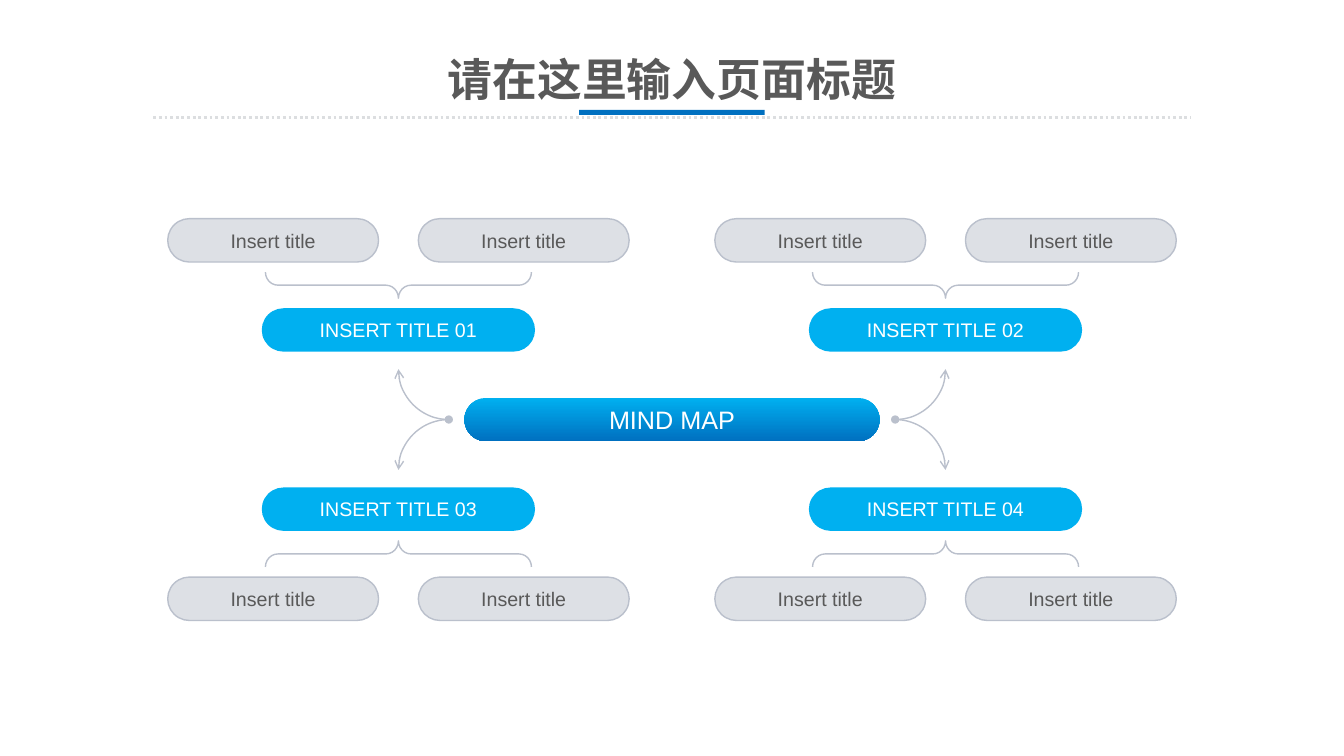
"""Build a mind map slide with one centre and four branches."""
from lxml import etree
from pptx import Presentation
from pptx.dml.color import RGBColor
from pptx.enum.dml import MSO_LINE
from pptx.enum.lang import MSO_LANGUAGE_ID
from pptx.enum.shapes import MSO_CONNECTOR, MSO_SHAPE
from pptx.enum.text import MSO_ANCHOR, MSO_AUTO_SIZE, PP_ALIGN
from pptx.oxml.ns import qn
from pptx.util import Pt

PILL, BRACE, ARC = MSO_SHAPE.ROUNDED_RECTANGLE, MSO_SHAPE.LEFT_BRACE, MSO_SHAPE.ARC
BAR = MSO_SHAPE.RECTANGLE
STRAIGHT = MSO_CONNECTOR.STRAIGHT
DOTTED = MSO_LINE.ROUND_DOT
CENTER, MIDDLE = PP_ALIGN.CENTER, MSO_ANCHOR.MIDDLE
NO_AUTOFIT = MSO_AUTO_SIZE.NONE
CHINESE = MSO_LANGUAGE_ID.SIMPLIFIED_CHINESE

COLORS = {
    "sky": "00B0F0",
    "blue": "0070C0",
    "leaf": "DDE0E5",
    "outline": "BAC0CC",
    "dots": "DCDEE0",
    "text": "595959",
    "white": "FFFFFF",
}
CENTER_X, CENTER_Y = 480, 299.7
COLUMN_OFFSET, ROW_STEP, LEAF_OFFSET = 195.4, 32, 89.5
PILL_HEIGHT, ARC_RADIUS = 31, 36
BRANCHES = [
    ("INSERT TITLE 01", -1, -1),
    ("INSERT TITLE 02", 1, -1),
    ("INSERT TITLE 03", -1, 1),
    ("INSERT TITLE 04", 1, 1),
]


def rgb(name):
    """Return the named colour."""
    return RGBColor.from_string(COLORS[name])


def write_text(frame, text, size=14, color="text", bold=False, language=None):
    """Put one centred line of text into a text frame."""
    frame.word_wrap = True
    frame.vertical_anchor = MIDDLE
    para = frame.paragraphs[0]
    para.alignment = CENTER
    span = para.add_run()
    span.text = text
    font = span.font
    font.name, font.size, font.bold = "Arial", Pt(size), bold
    font.color.rgb = rgb(color)
    if language:
        font.language_id = language


def add_centered(shapes, kind, x, y, width, height, fill=None, line=None):
    """Add a preset shape around a centre point."""
    shape = shapes.add_shape(
        kind, Pt(x - width / 2), Pt(y - height / 2), Pt(width), Pt(height))
    shape.shadow.inherit = False
    if fill:
        shape.fill.solid()
        shape.fill.fore_color.rgb = rgb(fill)
    else:
        shape.fill.background()
    if line:
        shape.line.color.rgb = rgb(line)
        shape.line.width = Pt(1)
    else:
        shape.line.fill.background()
    return shape


def add_pill(page, text, x, y, width, fill, line=None, **text_format):
    """Add a fully rounded box with a label."""
    pill = add_centered(page.shapes, PILL, x, y, width, PILL_HEIGHT, fill, line)
    pill.adjustments[0] = 0.5
    write_text(pill.text_frame, text, **text_format)
    return pill


def add_brace(page, x, y, rotation):
    """Add a brace that points at a branch title."""
    brace = add_centered(page.shapes, BRACE, x, y, 18.6, 190, line="outline")
    brace.adjustments[0] = 0.481
    brace.rotation = rotation


def add_arc(shapes, side, level, rotation, **ends):
    """Add a quarter circle with the given line ends."""
    x = CENTER_X + side * (COLUMN_OFFSET - ARC_RADIUS)
    y = CENTER_Y + level * ARC_RADIUS
    arc = add_centered(shapes, ARC, x, y, 2 * ARC_RADIUS, 2 * ARC_RADIUS, line="outline")
    arc.rotation = rotation
    if side < 0:
        arc._element.spPr.find(qn("a:xfrm")).set("flipH", "1")
    outline = arc._element.spPr.find(qn("a:ln"))
    for end, style in ends.items():
        etree.SubElement(outline, qn("a:" + end), type=style)


def add_arrow_pair(page, side):
    """Add the two grouped arrows on one side of the centre."""
    group = page.shapes.add_group_shape()
    add_arc(group.shapes, side, 1, 0, tailEnd="arrow")
    add_arc(group.shapes, side, -1, side * 90 % 360, headEnd="arrow", tailEnd="oval")


def add_branch(page, text, side, level):
    """Add a branch title with its brace and two leaves."""
    x = CENTER_X + side * COLUMN_OFFSET
    title_y, brace_y, leaf_y = (
        CENTER_Y + level * ROW_STEP * step for step in (2, 3, 4))
    add_pill(page, text, x, title_y, 195.2, "sky", color="white")
    add_brace(page, x, brace_y, level * 90 % 360)
    for direction in (-1, 1):
        add_pill(page, "Insert title", x + direction * LEAF_OFFSET, leaf_y,
                 150.6, "leaf", "outline")


def add_center(page):
    """Add the central topic with its vertical gradient."""
    topic = add_pill(page, "MIND MAP", CENTER_X, CENTER_Y, 296.6, "sky",
                     size=18, color="white")
    topic.fill.gradient()
    topic.fill.gradient_angle = 270
    for stop, name, position in zip(topic.fill.gradient_stops, ("sky", "blue"), (0, 1)):
        stop.color.rgb = rgb(name)
        stop.position = position


def add_heading(page, text):
    """Fill the title and draw the rule and accent bar below it."""
    title = page.shapes.title
    title.left, title.top, title.width, title.height = Pt(234.5), Pt(39.6), Pt(491), Pt(33)
    frame = title.text_frame
    frame.auto_size = NO_AUTOFIT
    frame.margin_left = frame.margin_right = Pt(1.5)
    frame.margin_top = frame.margin_bottom = Pt(1.5)
    write_text(frame, text, size=32, bold=True, language=CHINESE)
    rule = page.shapes.add_connector(STRAIGHT, Pt(109.5), Pt(84), Pt(850.5), Pt(84))
    rule.line.color.rgb = rgb("dots")
    rule.line.width = Pt(2)
    rule.line.dash_style = DOTTED
    etree.SubElement(rule._element.spPr, qn("a:effectLst"))
    add_centered(page.shapes, BAR, CENTER_X, 80.3, 132.5, 3.6, "blue")


def main():
    """Build and save the deck."""
    deck = Presentation()
    deck.slide_width, deck.slide_height = Pt(960), Pt(540)
    page = deck.slides.add_slide(deck.slide_layouts[5])
    add_heading(page, "请在这里输入页面标题")
    add_center(page)
    for branch in BRANCHES:
        add_branch(page, *branch)
    for side in (-1, 1):
        add_arrow_pair(page, side)
    deck.save("out.pptx")


if __name__ == "__main__":
    main()
